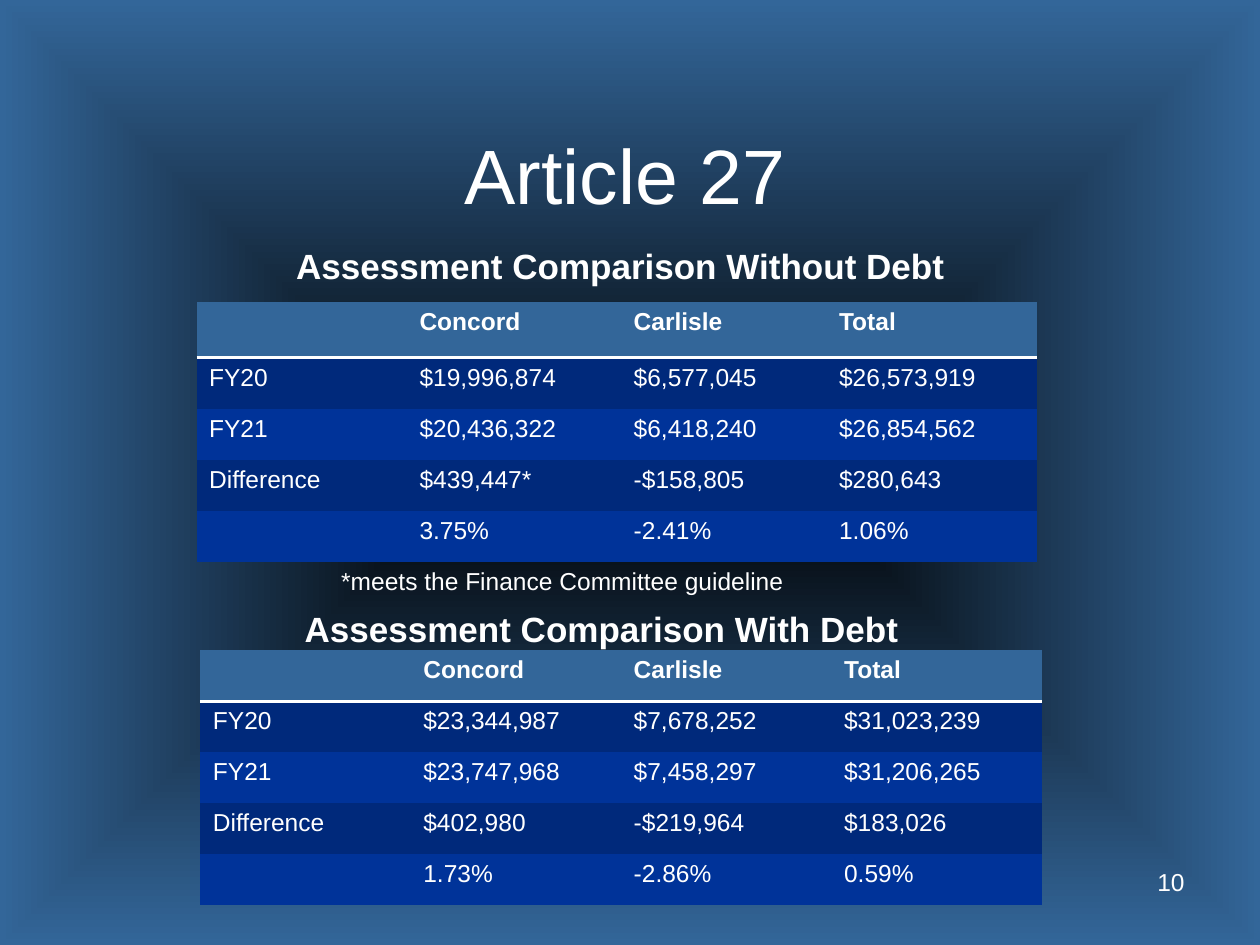
from lxml import etree
from pptx import Presentation
from pptx.dml.color import RGBColor
from pptx.enum import text
from pptx.oxml import parse_xml
from pptx.oxml.ns import nsdecls, qn
from pptx.util import Inches, Pt

FONT = "Arial"
WHITE = RGBColor(0xFF, 0xFF, 0xFF)
BLACK = RGBColor(0, 0, 0)
STEEL = RGBColor(0x33, 0x66, 0x99)
BANDS = [RGBColor(0x00, 0x29, 0x7B), RGBColor(0x00, 0x33, 0x99)]
PLAIN_TABLE_STYLE = "{2D5ABB26-0587-4C30-8999-92F81FD0307C}"

HEADER = ["", "Concord", "Carlisle", "Total"]
WITHOUT_DEBT = [
    HEADER,
    ["FY20", "$19,996,874", "$6,577,045", "$26,573,919"],
    ["FY21", "$20,436,322", "$6,418,240", "$26,854,562"],
    ["Difference", "$439,447*", "-$158,805", "$280,643"],
    ["", "3.75%", "-2.41%", "1.06%"],
]
WITH_DEBT = [
    HEADER,
    ["FY20", "$23,344,987", "$7,678,252", "$31,023,239"],
    ["FY21", "$23,747,968", "$7,458,297", "$31,206,265"],
    ["Difference", "$402,980", "-$219,964", "$183,026"],
    ["", "1.73%", "-2.86%", "0.59%"],
]


def set_background(slide):
    """Rectangular gradient, dark in the middle."""
    fill = slide.background.fill
    fill.gradient()
    for stop, color in zip(fill.gradient_stops, (BLACK, STEEL)):
        stop.color.rgb = color
    for stop, position in zip(fill.gradient_stops, (0, 1)):
        stop.position = position
    lin = slide.element.find(".//" + qn("a:lin"))
    lin.getparent().replace(lin, parse_xml(
        f'<a:path {nsdecls("a")} path="shape">'
        '<a:fillToRect l="50000" t="50000" r="50000" b="50000"/></a:path>'))


def style_paragraph(p, size, bold=False):
    p.font.name = FONT
    p.font.size = Pt(size)
    p.font.bold = bold
    p.font.color.rgb = WHITE


def add_text(slide, words, box, size, align=text.PP_ALIGN.CENTER, bold=False,
             anchor=text.MSO_ANCHOR.TOP, wrap=True):
    tf = slide.shapes.add_textbox(*map(Inches, box)).text_frame
    tf.word_wrap = wrap
    tf.vertical_anchor = anchor
    p = tf.paragraphs[0]
    p.text = words
    p.alignment = align
    style_paragraph(p, size, bold)


def add_bottom_border(cell):
    ln = etree.SubElement(cell._tc.get_or_add_tcPr(), qn("a:lnB"), w=str(Pt(2)))
    fill = etree.SubElement(ln, qn("a:solidFill"))
    etree.SubElement(fill, qn("a:srgbClr"), val=str(WHITE))


def add_comparison(slide, rows, left, top, widths, heights):
    frame = slide.shapes.add_table(
        len(rows), len(widths), Inches(left), Inches(top),
        Inches(sum(widths)), Inches(sum(heights)))
    table = frame.table
    table._tbl.tblPr.find(qn("a:tableStyleId")).text = PLAIN_TABLE_STYLE
    for column, width in zip(table.columns, widths):
        column.width = Inches(width)
    for i, (values, height) in enumerate(zip(rows, heights)):
        table.rows[i].height = Inches(height)
        for cell, value in zip(table.rows[i].cells, values):
            is_header = i == 0
            if is_header:
                add_bottom_border(cell)
            cell.fill.solid()
            cell.fill.fore_color.rgb = STEEL if is_header else BANDS[(i - 1) % 2]
            cell.text = value
            style_paragraph(cell.text_frame.paragraphs[0], 14, is_header)


def main():
    prs = Presentation()
    prs.slide_width, prs.slide_height = Inches(10), Inches(7.5)
    slide = prs.slides.add_slide(prs.slide_layouts[6])
    set_background(slide)

    # Title
    add_text(slide, "Article 27", (1, 0.92, 7.92, 0.92), 44,
             anchor=text.MSO_ANCHOR.MIDDLE)

    # Comparison without debt
    add_text(slide, "Assessment Comparison Without Debt",
             (0.96, 1.89, 7.93, 0.44), 20, bold=True)
    add_comparison(slide, WITHOUT_DEBT, 1.56, 2.4,
                   [1.67, 1.7, 1.63, 1.67], [0.44] + [0.405] * 4)
    add_text(slide, "*meets the Finance Committee guideline",
             (2.61, 4.44, 3.74, 0.34), 14, text.PP_ALIGN.LEFT, wrap=False)

    # Comparison with debt
    add_text(slide, "Assessment Comparison With Debt",
             (0.87, 4.77, 7.81, 0.44), 20, bold=True)
    add_comparison(slide, WITH_DEBT, 1.59, 5.16, [1.67] * 4, [0.405] * 5)

    # Slide number
    add_text(slide, "10", (7.17, 6.83, 2.33, 0.52), 14, text.PP_ALIGN.RIGHT)

    prs.save("out.pptx")


if __name__ == "__main__":
    main()
